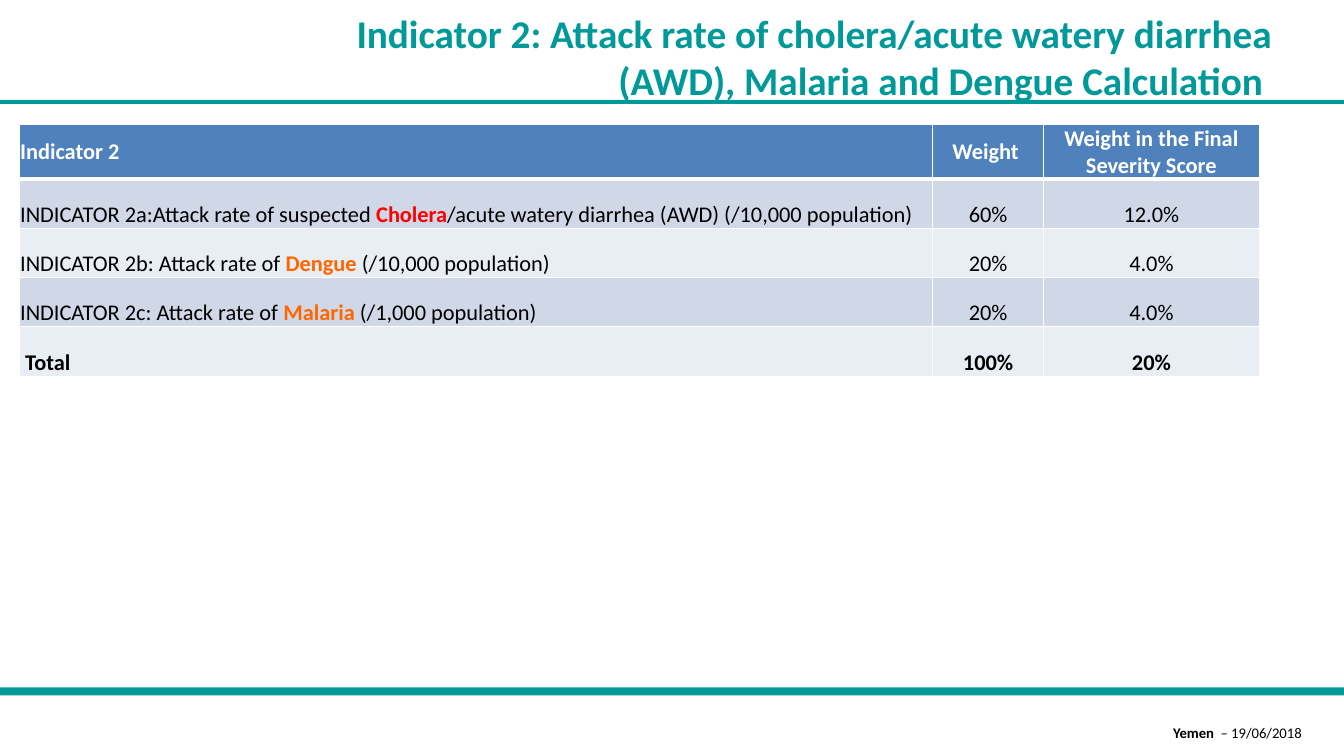
from lxml import etree
from pptx import Presentation
from pptx.dml.color import RGBColor
from pptx.enum.shapes import MSO_SHAPE
from pptx.enum.text import MSO_ANCHOR, PP_ALIGN
from pptx.oxml.ns import qn
from pptx.util import Inches, Pt

RECTANGLE = MSO_SHAPE.RECTANGLE
MIDDLE, BOTTOM = MSO_ANCHOR.MIDDLE, MSO_ANCHOR.BOTTOM
LEFT, CENTER, RIGHT = PP_ALIGN.LEFT, PP_ALIGN.CENTER, PP_ALIGN.RIGHT

TEAL = RGBColor(0x00, 0x99, 0x99)
BLACK = RGBColor(0x00, 0x00, 0x00)
WHITE = RGBColor(0xFF, 0xFF, 0xFF)
RED = RGBColor(0xFF, 0x00, 0x00)
ORANGE = RGBColor(0xFF, 0x66, 0x00)
HEADER_BLUE = RGBColor(0x4F, 0x81, 0xBD)
BANDS = (RGBColor(0xD0, 0xD8, 0xE8), RGBColor(0xE9, 0xED, 0xF4))

SLIDE_WIDTH, SLIDE_HEIGHT = 13.33, 7.5
COLUMN_WIDTHS = (9.06, 1.1, 2.14)
HEADINGS = ("Indicator 2", "Weight ", "Weight in the Final Severity Score")
INDICATORS = (
    ("INDICATOR 2a:Attack rate of suspected ", "Cholera", RED,
     "/acute watery diarrhea (AWD) (/10,000 population)", "60%", "12.0%"),
    ("INDICATOR 2b: Attack rate of ", "Dengue", ORANGE,
     " (/10,000 population)", "20%", "4.0%"),
    ("INDICATOR 2c: Attack rate of ", "Malaria", ORANGE,
     " (/1,000 population)", "20%", "4.0%"),
)
TOTALS = (" Total", "100%", "20%")


def write_runs(frame, runs, size, align, anchor):
    frame.word_wrap = True
    frame.vertical_anchor = anchor
    paragraph = frame.paragraphs[0]
    paragraph.alignment = align
    for text, color, bold in runs:
        run = paragraph.add_run()
        run.text = text
        run.font.name = "Calibri"
        run.font.size = Pt(size)
        run.font.bold = bold
        run.font.color.rgb = color


def add_bar(slide, left, top, width, height):
    bar = slide.shapes.add_shape(
        RECTANGLE, Inches(left), Inches(top), Inches(width), Inches(height))
    bar.shadow.inherit = False
    bar.fill.solid()
    bar.fill.fore_color.rgb = TEAL
    bar.line.fill.background()


def add_caption(slide, left, top, width, height, runs, size, anchor):
    caption = slide.shapes.add_textbox(
        Inches(left), Inches(top), Inches(width), Inches(height))
    write_runs(caption.text_frame, runs, size, RIGHT, anchor)


def add_header(slide, left, top, width):
    add_bar(slide, left, top + 0.99, width, 0.04)
    title = ("Indicator 2: Attack rate of cholera/acute watery diarrhea "
             "(AWD), Malaria and Dengue Calculation ")
    add_caption(slide, left + 3.14, top + 0.36, 9.57, 0.4,
                [(title, TEAL, True)], 28, MIDDLE)


def add_footer(slide, left, top, width):
    add_bar(slide, left, top, width, 0.08)
    add_caption(slide, left + 6.35, top + 0.27, 6.66, 0.35,
                [("Yemen ", BLACK, True), (" – 19/06/2018", BLACK, False)],
                10.5, MIDDLE)


def set_borders(cell, bottom_width):
    properties = cell._tc.get_or_add_tcPr()
    sides = (("a:lnL", 1), ("a:lnR", 1), ("a:lnT", 1), ("a:lnB", bottom_width))
    for position, (side, width) in enumerate(sides):
        border = etree.Element(qn(side), w=str(Pt(width)))
        fill = etree.SubElement(border, qn("a:solidFill"))
        etree.SubElement(fill, qn("a:srgbClr"), val=str(WHITE))
        properties.insert(position, border)


def fill_cell(cell, runs, fill, align, anchor, bottom_width):
    cell.margin_left = cell.margin_top = cell.margin_right = Inches(0.01)
    cell.margin_bottom = 0
    cell.fill.solid()
    cell.fill.fore_color.rgb = fill
    write_runs(cell.text_frame, runs, 16, align, anchor)
    cell.vertical_anchor = anchor
    set_borders(cell, bottom_width)


def table_rows():
    rows = [[[(heading, WHITE, True)] for heading in HEADINGS]]
    for lead, disease, color, rate, weight, final_weight in INDICATORS:
        rows.append([
            [(lead, BLACK, False), (disease, color, True), (rate, BLACK, False)],
            [(weight, BLACK, False)],
            [(final_weight, BLACK, False)],
        ])
    rows.append([[(total, BLACK, True)] for total in TOTALS])
    return rows


def add_weights_table(slide, left, top, row_height):
    rows = table_rows()
    weights = slide.shapes.add_table(
        len(rows), len(COLUMN_WIDTHS), Inches(left), Inches(top),
        Inches(sum(COLUMN_WIDTHS)), Inches(row_height * len(rows))).table
    for column, width in zip(weights.columns, COLUMN_WIDTHS):
        column.width = Inches(width)
    for r, row in enumerate(rows):
        weights.rows[r].height = Inches(row_height)
        is_heading = r == 0
        fill = HEADER_BLUE if is_heading else BANDS[(r - 1) % 2]
        for c, runs in enumerate(row):
            fill_cell(weights.cell(r, c), runs, fill,
                      CENTER if c else LEFT,
                      MIDDLE if is_heading else BOTTOM,
                      3 if is_heading else 1)


def main():
    presentation = Presentation()
    presentation.slide_width = Inches(SLIDE_WIDTH)
    presentation.slide_height = Inches(SLIDE_HEIGHT)
    slide = presentation.slides.add_slide(presentation.slide_layouts[6])
    add_footer(slide, 0, 6.82, SLIDE_WIDTH)
    add_header(slide, 0, 0, SLIDE_WIDTH)
    add_weights_table(slide, 0.19, 1.23, 0.49)
    presentation.save("out.pptx")


if __name__ == "__main__":
    main()
